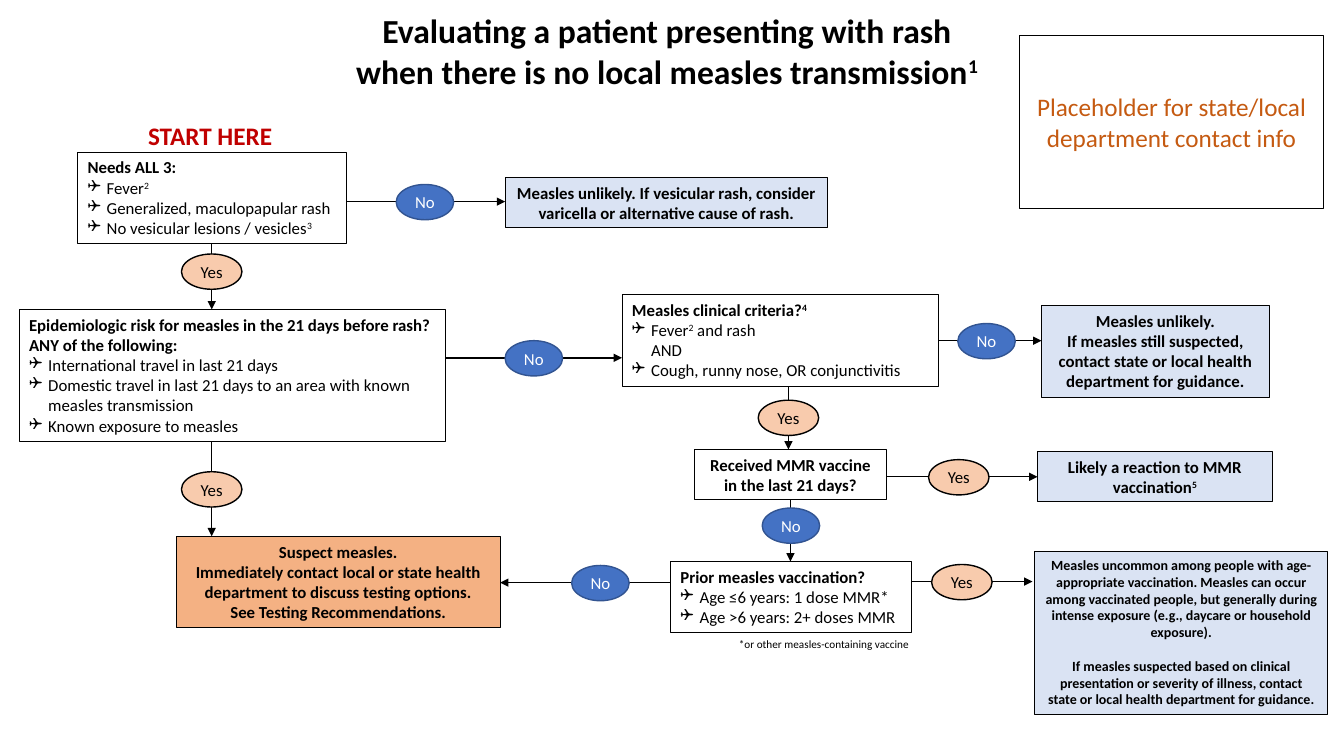
from lxml.etree import SubElement
from pptx import Presentation
from pptx.dml.color import RGBColor
from pptx.enum.shapes import MSO_CONNECTOR, MSO_SHAPE
from pptx.enum.text import MSO_ANCHOR, MSO_AUTO_SIZE, PP_ALIGN
from pptx.oxml.ns import qn
from pptx.util import Pt

PX = 9144
INDENT = 19
COLORS = {
    "black": "000000", "white": "FFFFFF", "red": "C00000", "rust": "C55A11",
    "blue": "4472C4", "navy": "325491", "pale": "DAE3F3", "peach": "F8CBAD",
    "orange": "F4B183",
}
BADGES = {"Yes": (60, "peach", "black", "black"), "No": (57, "blue", "navy", "white")}


def rgb(name):
    """Look up a named colour."""
    return RGBColor.from_string(COLORS[name])


def emu(*lengths):
    """Turn px into EMU."""
    return [v * PX for v in lengths]


def add_runs(p, text, size, color, bold):
    """Add runs to a paragraph; pieces between carets are superscript."""
    for i, piece in enumerate(text.split("^")):
        if piece:
            r = p.add_run()
            r.text = piece
            r.font.name, r.font.size, r.font.bold = "Calibri", Pt(size), bold
            r.font.color.rgb = rgb(color)
            if i % 2:
                r.font._element.set("baseline", "30000")


def indent(p, check):
    """Indent a paragraph, hanging it from a check box if asked."""
    pPr = p._p.get_or_add_pPr()
    pPr.set("marL", str(INDENT * PX))
    if check:
        pPr.set("indent", str(-INDENT * PX))
        SubElement(pPr, qn("a:buFont"), typeface="Wingdings")
        SubElement(pPr, qn("a:buChar"), char="❑")


def write(shape, paras, size=12, color="black", align=PP_ALIGN.CENTER,
          anchor=MSO_ANCHOR.TOP, gap=0, wrap=True):
    """Fill a shape with (style, text) paragraphs."""
    tf = shape.text_frame
    tf.word_wrap, tf.auto_size, tf.vertical_anchor = wrap, MSO_AUTO_SIZE.NONE, anchor
    for i, (style, text) in enumerate(paras):
        p = tf.paragraphs[0] if i == 0 else tf.add_paragraph()
        p.alignment = align
        if i:
            p.space_before = Pt(gap)
        if style in ("check", "sub"):
            indent(p, style == "check")
        add_runs(p, text, size, color, style == "bold")


def block(s, kind, box, fill, line, width):
    """Add a filled and outlined shape."""
    sp = s.shapes.add_shape(kind, *emu(*box))
    sp.shadow.inherit = False
    if fill:
        sp.fill.solid()
        sp.fill.fore_color.rgb = rgb(fill)
    else:
        sp.fill.background()
    sp.line.color.rgb, sp.line.width = rgb(line), Pt(width)
    return sp


def question(s, box, paras, align=PP_ALIGN.LEFT):
    """Add an unfilled decision box."""
    write(block(s, MSO_SHAPE.RECTANGLE, box, None, "black", 0.75), paras, align=align)


def outcome(s, box, *lines, fill="pale", size=12, gap=0):
    """Add a filled result box with bold centred lines."""
    sp = block(s, MSO_SHAPE.RECTANGLE, box, fill, "black", 0.75)
    write(sp, [("bold", t) for t in lines], size, gap=gap)


def label(s, box, style, text, size, color="black", wrap=True):
    """Add a free line of text."""
    write(s.shapes.add_textbox(*emu(*box)), [(style, text)], size, color,
          PP_ALIGN.LEFT, wrap=wrap)


def branch(s, x, y, dx, dy, answer, reach):
    """Draw an arrow from x, y with its answer badge reach px along it."""
    c = s.shapes.add_connector(MSO_CONNECTOR.STRAIGHT, *emu(x, y, x + dx, y + dy))
    c.line.color.rgb, c.line.width = rgb("black"), Pt(1)
    SubElement(c.line._get_or_add_ln(), qn("a:tailEnd"), type="triangle")
    SubElement(c._element.spPr, qn("a:effectLst"))
    w, fill, line, color = BADGES[answer]
    h = 35
    cx = x + reach * ((dx > 0) - (dx < 0))
    cy = y + reach * ((dy > 0) - (dy < 0))
    sp = block(s, MSO_SHAPE.OVAL, (cx - w // 2, cy - h // 2, w, h), fill, line, 1)
    sp.text_frame.margin_left = sp.text_frame.margin_right = 0
    write(sp, [("plain", answer)], color=color, anchor=MSO_ANCHOR.MIDDLE)


def heading(s, x, y, w, h):
    """Place the slide title."""
    sp = s.shapes.title
    sp.left, sp.top, sp.width, sp.height = emu(x, y, w, h)
    write(sp, [("bold", "Evaluating a patient presenting with rash "
                "when there is no local measles transmission^1")], 24)


def contact(s, *box):
    """Add the contact information box."""
    sp = block(s, MSO_SHAPE.RECTANGLE, box, "white", "black", 1)
    write(sp, [("plain", "Placeholder for state/local department contact info")],
          18, "rust", anchor=MSO_ANCHOR.MIDDLE)


def symptoms(s, x, y, w, h):
    """Add the starting question and its outcome."""
    label(s, (x + 60, y - 37, 144, 40), "bold", "START HERE", 18, "red", False)
    question(s, (x, y, w, h), [
        ("bold", "Needs ALL 3:"), ("check", "Fever^2"),
        ("check", "Generalized, maculopapular rash"),
        ("check", "No vesicular lesions / vesicles^3")])
    branch(s, x + w, y + 49, 157, 0, "No", 77)
    branch(s, x + 133, y + h, 0, 65, "Yes", 27)
    outcome(s, (x + w + 157, y + 25, 320, 50),
            "Measles unlikely. If vesicular rash, consider varicella "
            "or alternative cause of rash.")


def exposure(s, x, y, w, h):
    """Add the epidemiologic risk question and the suspect outcome."""
    question(s, (x, y, w, h), [
        ("bold", "Epidemiologic risk for measles in the 21 days before rash?"),
        ("bold", "ANY of the following:"),
        ("check", "International travel in last 21 days"),
        ("check", "Domestic travel in last 21 days to an area with known "
                  "measles transmission"),
        ("check", "Known exposure to measles")])
    branch(s, x + w, y + 48, 175, 0, "No", 87)
    branch(s, x + 191, y + h, 0, 94, "Yes", 47)
    outcome(s, (x + 156, y + h + 94, 321, 91), "Suspect measles.",
            "Immediately contact local or state health department to discuss "
            "testing options.", "See Testing Recommendations.", fill="orange")


def criteria(s, x, y, w, h):
    """Add the clinical criteria question and its outcome."""
    question(s, (x, y, w, h), [
        ("bold", "Measles clinical criteria?^4"), ("check", "Fever^2^ and rash"),
        ("sub", "AND"), ("check", "Cough, runny nose, OR conjunctivitis")])
    branch(s, x + w, y + 46, 102, 0, "No", 47)
    branch(s, x + 165, y + h, 0, 63, "Yes", 31)
    outcome(s, (x + w + 102, y + 11, 226, 91), "Measles unlikely.",
            "If measles still suspected, contact state or local health "
            "department for guidance.")


def recent_dose(s, x, y, w, h):
    """Add the recent vaccine question and its outcome."""
    question(s, (x, y, w, h),
             [("bold", "Received MMR vaccine in the last 21 days?")], PP_ALIGN.CENTER)
    branch(s, x + w, y + 27, 150, 0, "Yes", 72)
    branch(s, x + w // 2, y + h, 0, 61, "No", 25)
    outcome(s, (x + w + 150, y + 2, 233, 50), "Likely a reaction to MMR vaccination^5")


def prior_doses(s, x, y, w, h):
    """Add the prior vaccination question, its footnote and outcome."""
    question(s, (x, y, w, h), [
        ("bold", "Prior measles vaccination?"),
        ("check", "Age ≤6 years: 1 dose MMR*"),
        ("check", "Age >6 years: 2+ doses MMR")])
    label(s, (x + 58, y + h - 1, 190, 24), "plain",
          "*or other measles-containing vaccine", 8)
    branch(s, x, y + 21, -169, 0, "No", 70)
    branch(s, x + w, y + 20, 120, 0, "Yes", 50)
    outcome(s, (x + w + 122, y - 10, 291, 162),
            "Measles uncommon among people with age-appropriate vaccination. "
            "Measles can occur among vaccinated people, but generally during "
            "intense exposure (e.g., daycare or household exposure).",
            "If measles suspected based on clinical presentation or severity of "
            "illness, contact state or local health department for guidance.",
            size=10, gap=12)


def main():
    """Build the flowchart slide."""
    prs = Presentation()
    prs.slide_width, prs.slide_height = emu(1333, 750)
    s = prs.slides.add_slide(prs.slide_layouts[5])
    heading(s, 342, 5, 639, 91)
    contact(s, 1011, 35, 302, 172)
    symptoms(s, 77, 151, 267, 91)
    exposure(s, 19, 307, 423, 131)
    criteria(s, 617, 292, 314, 91)
    recent_dose(s, 689, 446, 190, 50)
    prior_doses(s, 665, 557, 239, 71)
    prs.save("out.pptx")


if __name__ == "__main__":
    main()
